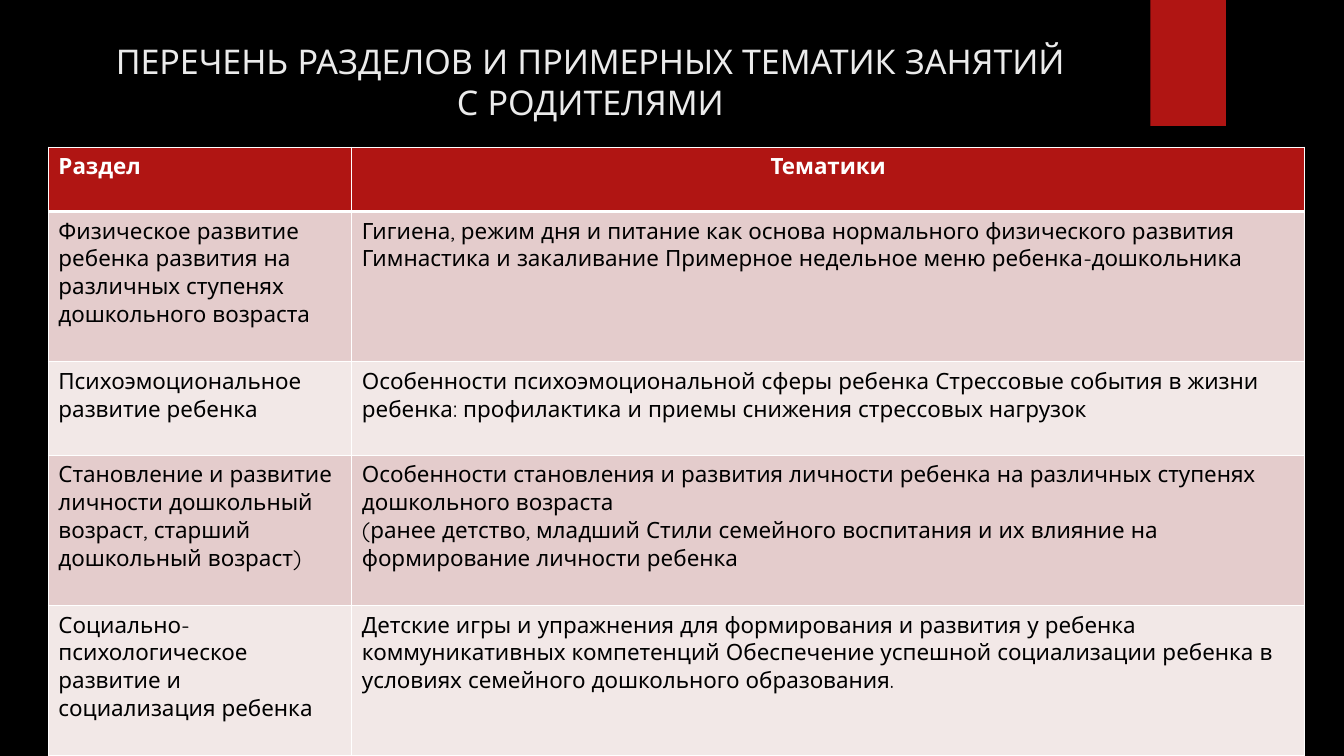
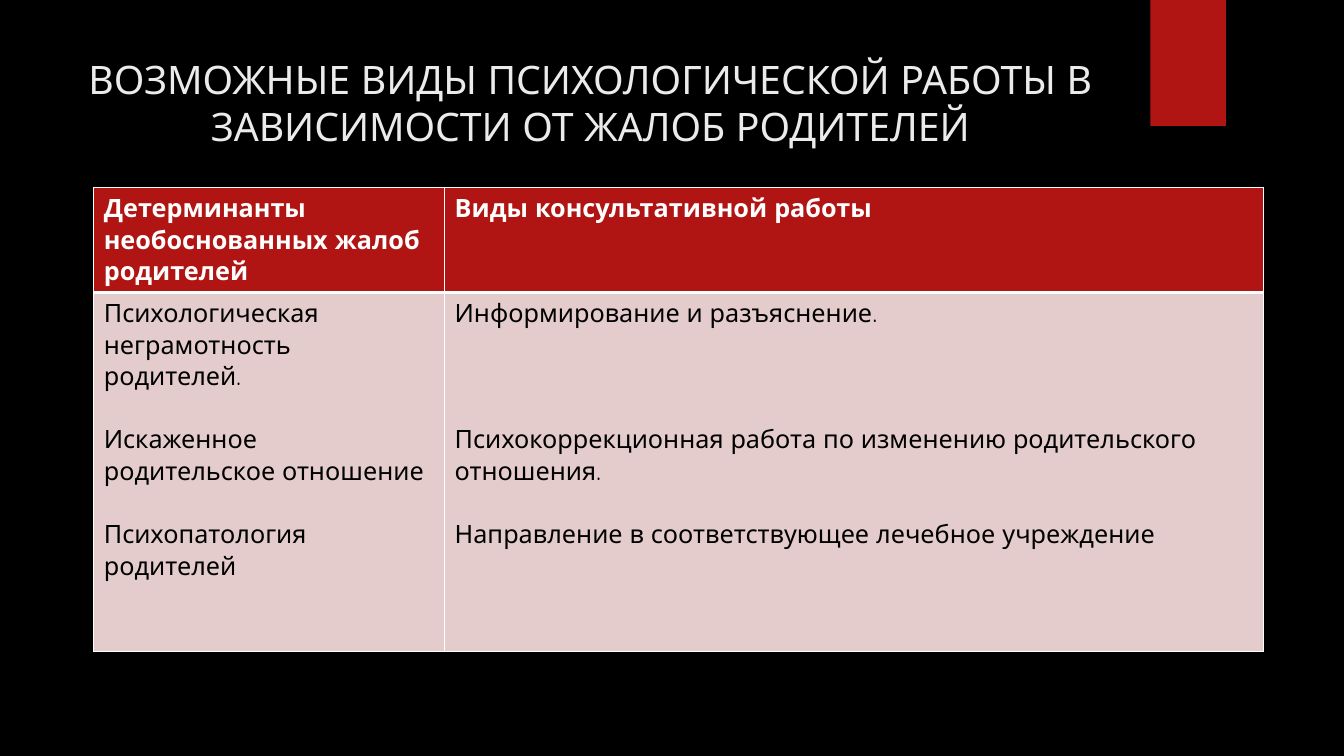
from lxml import etree
from pptx import Presentation
from pptx import util as u
from pptx.dml.color import RGBColor
from pptx.enum import shapes, text
from pptx.oxml.ns import qn

FONT = "Quicksand"
RED, WHITE, BLACK, TITLE = "B01513", "FFFFFF", "000000", "EBEBEB"
BANDS = ("E4CCCC", "F2E8E7")
LEFT, CENTER = text.PP_ALIGN.LEFT, text.PP_ALIGN.CENTER

SLIDES = [
    {
        "title": "ПЕРЕЧЕНЬ РАЗДЕЛОВ И ПРИМЕРНЫХ ТЕМАТИК ЗАНЯТИЙ\vС РОДИТЕЛЯМИ",
        "title_top": 0.35, "title_size": 24.3, "size": 16,
        "at": (0.48, 1.46), "cols": (3.01, 9.45),
        "heights": (0.64, 1.49, 0.93, 1.49, 1.49),
        "header_align": (LEFT, CENTER), "gaps": {},
        "rows": [
            (["Раздел"], ["Тематики"]),
            (["Физическое развитие ребенка развития на различных ступенях дошкольного возраста"],
             ["Гигиена, режим дня и питание как основа нормального физического развития",
              "Гимнастика и закаливание Примерное недельное меню ребенка-дошкольника"]),
            (["Психоэмоциональное развитие ребенка"],
             ["Особенности психоэмоциональной сферы ребенка Стрессовые события в жизни ребенка: "
              "профилактика и приемы снижения стрессовых нагрузок"]),
            (["Становление и развитие личности дошкольный возраст, старший дошкольный возраст)"],
             ["Особенности становления и развития личности ребенка на различных ступенях "
              "дошкольного возраста",
              "(ранее детство, младший Стили семейного воспитания и их влияние на "
              "формирование личности ребенка"]),
            (["Социально-психологическое развитие и социализация ребенка"],
             ["Детские игры и упражнения для формирования и развития у ребенка коммуникативных "
              "компетенций Обеспечение успешной социализации ребенка в условиях семейного "
              "дошкольного образования."]),
        ],
    },
    {
        "title": "ВОЗМОЖНЫЕ ВИДЫ ПСИХОЛОГИЧЕСКОЙ РАБОТЫ В ЗАВИСИМОСТИ ОТ ЖАЛОБ РОДИТЕЛЕЙ",
        "title_top": 0.5, "title_size": 28, "size": 18,
        "at": (0.93, 1.86), "cols": (3.48, 8.12), "heights": (1.03, 3.56),
        "header_align": (LEFT, LEFT),
        "gaps": {(1, 0): (0, 22.5, 22.5), (1, 1): (0, 67.5, 22.5)},
        "rows": [
            (["Детерминанты необоснованных жалоб родителей"], ["Виды консультативной работы"]),
            (["Психологическая неграмотность родителей.",
              "Искаженное родительское отношение",
              "Психопатология родителей"],
             ["Информирование и разъяснение.",
              "Психокоррекционная работа по изменению родительского отношения.",
              "Направление в соответствующее лечебное учреждение"]),
        ],
    },
]


def rgb(value):
    return RGBColor.from_string(value)


def set_font(p, color, **values):
    for name, value in {"name": FONT, **values}.items():
        setattr(p.font, name, value)
    p.font.color.rgb = rgb(color)


def add_borders(cell, bottom):
    tcPr = cell._tc.get_or_add_tcPr()
    for i, (side, width) in enumerate((("lnL", 1), ("lnR", 1), ("lnT", 1), ("lnB", bottom))):
        ln = etree.Element(qn("a:" + side), w=str(u.Pt(width)))
        fill = etree.SubElement(ln, qn("a:solidFill"))
        etree.SubElement(fill, qn("a:srgbClr"), val=WHITE)
        tcPr.insert(i, ln)


def add_band(s):
    sp = s.shapes.add_shape(shapes.MSO_SHAPE.RECTANGLE, u.Inches(11.41), 0,
                            u.Inches(0.75), u.Inches(1.25))
    sp.shadow.inherit = False
    sp.fill.solid()
    sp.fill.fore_color.rgb = rgb(RED)
    sp.line.fill.background()


def add_title(s, data):
    sp = s.shapes.title
    place = {"left": 0.71, "top": data["title_top"], "width": 10.29, "height": 1.1}
    for name, value in place.items():
        setattr(sp, name, u.Inches(value))
    tf = sp.text_frame
    tf.text = data["title"]
    tf.word_wrap = True
    tf.vertical_anchor = text.MSO_ANCHOR.TOP
    p = tf.paragraphs[0]
    p.alignment = CENTER
    set_font(p, TITLE, size=u.Pt(data["title_size"]))


def fill_cell(cell, lines, row, col, data):
    header = row == 0
    cell.fill.solid()
    cell.fill.fore_color.rgb = rgb(RED if header else BANDS[(row - 1) % 2])
    add_borders(cell, 3 if header else 1)
    cell.text_frame.text = "\n".join(lines)
    gaps = data["gaps"].get((row, col), (0,) * len(lines))
    for p, gap in zip(cell.text_frame.paragraphs, gaps):
        p.alignment = data["header_align"][col] if header else LEFT
        if gap:
            p.space_before = u.Pt(gap)
        set_font(p, WHITE if header else BLACK, size=u.Pt(data["size"]), bold=header)


def add_grid(s, data):
    left, top = data["at"]
    cols, heights = data["cols"], data["heights"]
    box = [u.Inches(v) for v in (left, top, sum(cols), sum(heights))]
    table = s.shapes.add_table(len(heights), len(cols), *box).table
    for column, width in zip(table.columns, cols):
        column.width = u.Inches(width)
    for row, (height, cells) in enumerate(zip(heights, data["rows"])):
        table.rows[row].height = u.Inches(height)
        for col, lines in enumerate(cells):
            fill_cell(table.cell(row, col), lines, row, col, data)


def main():
    prs = Presentation()
    prs.slide_width, prs.slide_height = u.Inches(13.33), u.Inches(7.5)
    background = prs.slide_master.background.fill
    background.solid()
    background.fore_color.rgb = rgb(BLACK)
    for data in SLIDES:
        s = prs.slides.add_slide(prs.slide_layouts[5])
        add_band(s)
        add_title(s, data)
        add_grid(s, data)
    prs.save("out.pptx")


if __name__ == "__main__":
    main()
